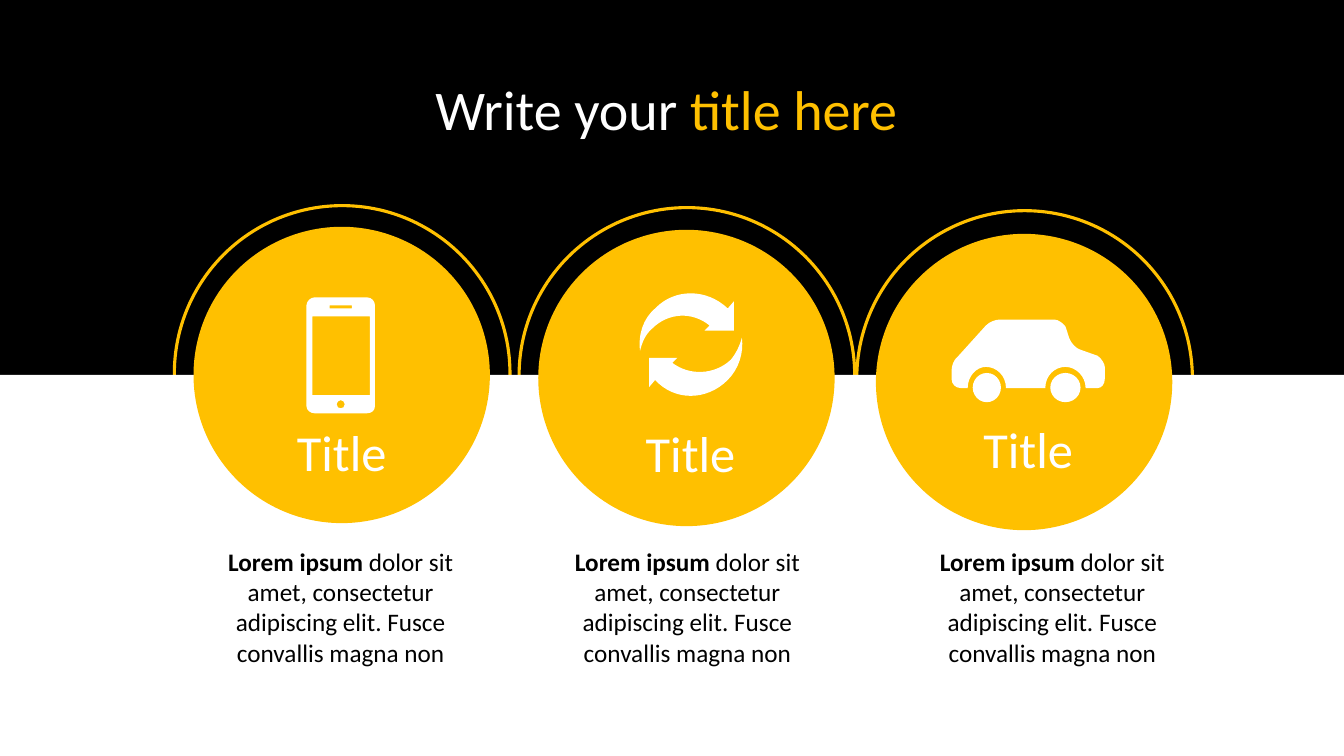
"""Build a slide with three titled icon discs under a two-colour heading."""
import pptx
import pptx.dml.color
import pptx.enum.shapes
import pptx.enum.text
import pptx.oxml.ns
import pptx.oxml.xmlchemy
import pptx.util

BLACK = pptx.dml.color.RGBColor(0x00, 0x00, 0x00)
WHITE = pptx.dml.color.RGBColor(0xFF, 0xFF, 0xFF)
AMBER = pptx.dml.color.RGBColor(0xFF, 0xC0, 0x00)

PX = 9144
PAGE_HEIGHT = 750
PAGE_WIDTH = PAGE_HEIGHT * 16 / 9
BAND_HEIGHT, WHITE_TOP = 375, 372
RING, DISC = 333, 294
LABEL_WIDTH, LABEL_HEIGHT = 222, 71
CAPTION_TOP, CAPTION_WIDTH, CAPTION_HEIGHT = 537, 294, 131

HEADING = [("Write your ", WHITE, False), ("title here", AMBER, False)]
HEADING_BOX = (191, 69, 940, 77)
LABEL = [("Title", WHITE, False)]
CAPTION = [
    ("Lorem ipsum ", BLACK, True),
    ("dolor sit amet, consectetur adipiscing elit. Fusce convallis magna non", BLACK, False),
]
COLUMNS = [
    {"ring": (173, 204), "disc": (192, 225), "label": (228, 413), "caption": 191},
    {"ring": (515, 206), "disc": (534, 228), "label": (574, 414), "caption": 535},
    {"ring": (850, 209), "disc": (869, 232), "label": (909, 410), "caption": 897},
]

PHONE = [
    [(364, 295), (312, 295), (308, 295, 304, 299, 304, 303), (304, 403),
     (304, 407, 308, 410, 312, 410), (364, 410), (369, 410, 372, 407, 372, 403),
     (372, 303), (372, 299, 369, 295, 364, 295)],
    [(327, 303), (349, 303), (349, 306), (327, 306)],
    [(338, 405), (336, 405, 334, 404, 334, 401), (334, 399, 336, 397, 338, 397),
     (340, 397, 342, 399, 342, 401), (342, 404, 340, 405, 338, 405)],
    [(367, 392), (310, 392), (310, 314), (367, 314)],
]
UPPER_ARROW = [
    [(722, 306), (701, 286, 669, 286, 650, 306), (638, 316, 633, 332, 635, 348),
     (637, 340, 640, 332, 647, 326), (663, 310, 687, 309, 704, 323),
     (699, 328), (728, 328), (728, 299)],
]
LOWER_ARROW = [
    [(650, 377), (669, 398, 701, 398, 722, 377), (733, 366, 738, 350, 736, 335),
     (734, 343, 730, 351, 725, 357), (709, 372, 684, 373, 667, 360),
     (672, 355), (644, 355), (644, 384)],
]
CAR = [
    [(1089, 353), (1072, 347), (1068, 346, 1063, 341, 1061, 336), (1057, 324),
     (1055, 321, 1050, 317, 1046, 317), (992, 317), (988, 317, 982, 319, 978, 323),
     (950, 354), (946, 357, 944, 363, 944, 368), (944, 376),
     (944, 381, 948, 385, 953, 385), (960, 385), (960, 373, 969, 364, 978, 364),
     (989, 364, 998, 373, 998, 385), (1037, 385), (1037, 373, 1046, 364, 1057, 364),
     (1067, 364, 1077, 373, 1077, 385), (1089, 385), (1093, 385, 1096, 381, 1096, 376),
     (1096, 364), (1096, 361, 1093, 356, 1089, 353)],
]
ICON_OUTLINES = [PHONE, UPPER_ARROW, LOWER_ARROW, CAR]
WHEELS = [(965, 370, 28, 29), (1042, 370, 30, 29)]


def scaled(*lengths):
    return [round(length * PX) for length in lengths]


def paint(shape, fill=None, line=None):
    shape.shadow.inherit = False
    for part, color in ((shape.fill, fill), (shape.line.fill, line)):
        if color is None:
            part.background()
        else:
            part.solid()
            part.fore_color.rgb = color
    if line is not None:
        shape.line.width = pptx.util.Pt(2.25)


def add_preset(page, kind, bounds, fill=None, line=None):
    paint(page.shapes.add_shape(kind, *scaled(*bounds)), fill, line)


def write(box, spans, size):
    frame = box.text_frame
    layout = {
        "word_wrap": True,
        "auto_size": pptx.enum.text.MSO_AUTO_SIZE.SHAPE_TO_FIT_TEXT,
        "vertical_anchor": pptx.enum.text.MSO_ANCHOR.TOP,
    }
    for name, value in layout.items():
        setattr(frame, name, value)
    para = frame.paragraphs[0]
    para.alignment = pptx.enum.text.PP_ALIGN.CENTER
    for text, color, bold in spans:
        span = para.add_run()
        span.text = text
        span.font.color.rgb = color
        style = {"name": "Calibri", "size": pptx.util.Pt(size), "bold": bold}
        for name, value in style.items():
            setattr(span.font, name, value)


def add_text(page, bounds, spans, size):
    write(page.shapes.add_textbox(*scaled(*bounds)), spans, size)


def step_points(step):
    return [scaled(*step[index:index + 2]) for index in range(0, len(step), 2)]


def bend(shape, contours):
    segments = iter(list(shape.element.iter(pptx.oxml.ns.qn("a:lnTo"))))
    for contour in contours:
        for step in contour[1:]:
            group = [next(segments) for _ in range(len(step) // 2)]
            if len(group) == 3:
                curve = pptx.oxml.xmlchemy.OxmlElement("a:cubicBezTo")
                group[0].addprevious(curve)
                for segment in group:
                    curve.append(segment[0])
                    segment.getparent().remove(segment)


def add_outline(page, contours):
    builder = page.shapes.build_freeform(*scaled(*contours[0][0]))
    for number, contour in enumerate(contours):
        if number:
            builder.move_to(*scaled(*contour[0]))
        points = [point for step in contour[1:] for point in step_points(step)]
        builder.add_line_segments(points, close=True)
    shape = builder.convert_to_shape()
    bend(shape, contours)
    paint(shape, WHITE)


def main():
    deck = pptx.Presentation()
    deck.slide_width, deck.slide_height = scaled(PAGE_WIDTH, PAGE_HEIGHT)
    page = deck.slides.add_slide(deck.slide_layouts.get_by_name("Title Only"))
    rectangle = pptx.enum.shapes.MSO_SHAPE.RECTANGLE
    oval = pptx.enum.shapes.MSO_SHAPE.OVAL

    add_preset(page, rectangle, (0, 0, PAGE_WIDTH, BAND_HEIGHT), BLACK)
    for column in COLUMNS:
        add_preset(page, oval, (*column["ring"], RING, RING), line=AMBER)
    add_preset(page, rectangle, (0, WHITE_TOP, PAGE_WIDTH, BAND_HEIGHT), WHITE)

    for column in COLUMNS:
        caption_bounds = (column["caption"], CAPTION_TOP, CAPTION_WIDTH, CAPTION_HEIGHT)
        add_text(page, caption_bounds, CAPTION, 18)
        add_preset(page, oval, (*column["disc"], DISC, DISC), AMBER)
        add_text(page, (*column["label"], LABEL_WIDTH, LABEL_HEIGHT), LABEL, 36)

    for contours in ICON_OUTLINES:
        add_outline(page, contours)
    for wheel in WHEELS:
        add_preset(page, oval, wheel, WHITE)

    heading = page.shapes.title
    for name, value in zip(("left", "top", "width", "height"), scaled(*HEADING_BOX)):
        setattr(heading, name, value)
    write(heading, HEADING, 40)
    heading.element.getparent().append(heading.element)
    deck.save("out.pptx")


if __name__ == "__main__":
    main()
